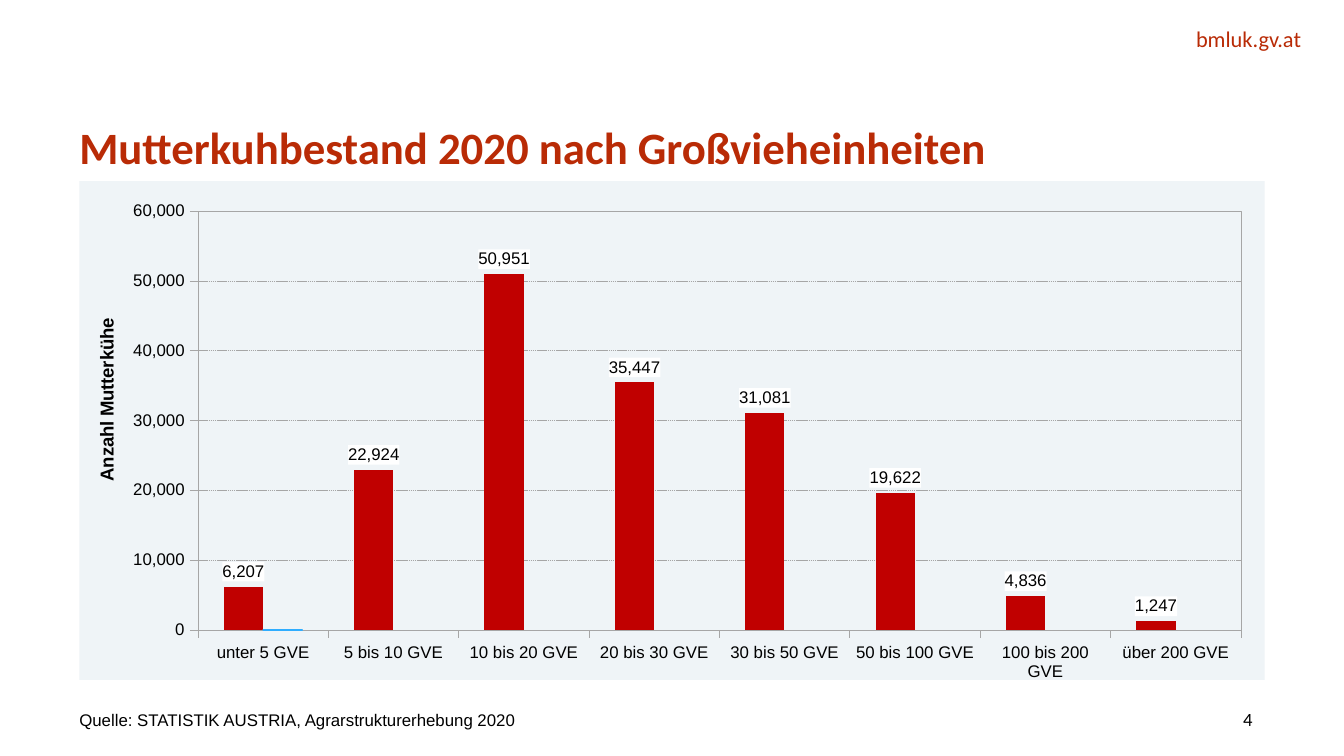
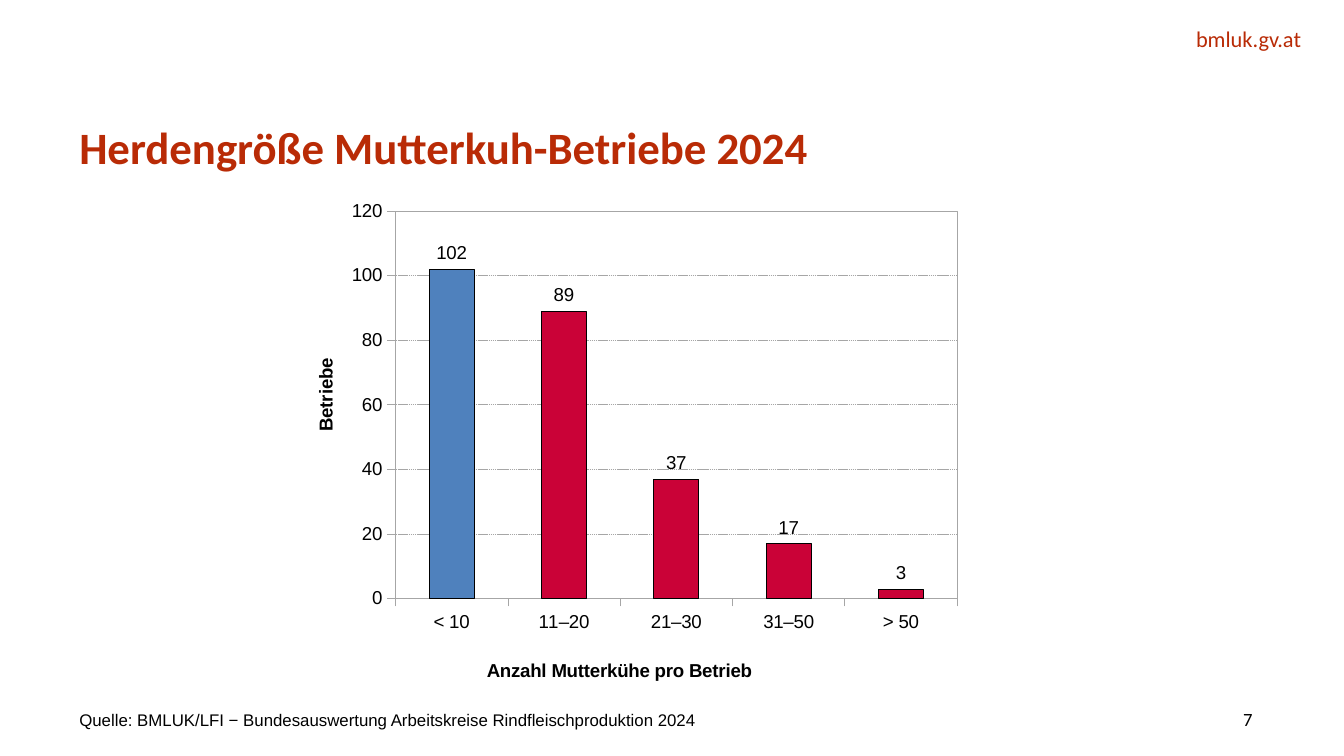
import pptx
import pptx.chart.data
import pptx.dml.color
import pptx.enum.chart
import pptx.enum.dml
import pptx.enum.text
import pptx.oxml
import pptx.oxml.ns
import pptx.util
from dataclasses import dataclass

Pt = pptx.util.Pt
qn = pptx.oxml.ns.qn
ALIGN = pptx.enum.text.PP_ALIGN
ANCHOR = pptx.enum.text.MSO_ANCHOR
CHART = pptx.enum.chart


@dataclass(frozen=True)
class Theme:
    brand: str = "B92B06"
    ink: str = "000000"
    rule: str = "A6A6A6"
    panel: str = "EFF4F7"
    paper: str = "FFFFFF"
    head_font: str = "Calibri"
    body_font: str = "Arial"
    title_size: float = 24
    site_size: float = 12
    page_size: float = 10
    source_size: float = 9
    chart_size: float = 10
    chart_small: float = 9
    hairline: float = 0.25


T = Theme()
MARGIN = 42.5  # left edge of title, source and first chart


def rgb(value):
    return pptx.dml.color.RGBColor.from_string(value)


def style_font(font, size, color=T.ink, name=T.body_font, bold=False):
    font.size, font.name, font.bold = Pt(size), name, bold
    font.color.rgb = rgb(color)


def style_line(line, color=T.rule, width=T.hairline, dashed=False):
    line.color.rgb = rgb(color)
    line.width = Pt(width)
    if dashed:
        line.dash_style = pptx.enum.dml.MSO_LINE.SQUARE_DOT


def add_text(slide, box, text, size, color=T.ink, font=T.body_font, bold=False,
             align=ALIGN.LEFT, anchor=ANCHOR.TOP, spacing=None):
    sp = slide.shapes.add_textbox(*map(Pt, box))
    tf = sp.text_frame
    tf.word_wrap = True
    tf.vertical_anchor = anchor
    tf.margin_left = tf.margin_right = tf.margin_top = tf.margin_bottom = 0
    p = tf.paragraphs[0]
    p.alignment = align
    if spacing:
        p.line_spacing = Pt(spacing)
    r = p.add_run()
    r.text = text
    style_font(r.font, size, color, font, bold)


def sp_pr(fill=None, line=None):
    """Shape properties for chart parts that python-pptx cannot format."""
    def solid(color):
        return f'<a:solidFill><a:srgbClr val="{color}"/></a:solidFill>' if color else "<a:noFill/>"
    width = Pt(T.hairline)
    return pptx.oxml.parse_xml(
        f'<c:spPr {pptx.oxml.ns.nsdecls("c", "a")}>{solid(fill)}'
        f'<a:ln w="{width}">{solid(line)}</a:ln></c:spPr>')


def set_layout(parent, index, x, y, size=None):
    """Place a plot area or title by fractions of the chart."""
    old = parent.find(qn("c:layout"))
    if old is not None:
        parent.remove(old)
    parts = [("xMode", "edge"), ("yMode", "edge"), ("x", x), ("y", y)]
    if size:
        parts = [("layoutTarget", "inner")] + parts + [("w", size[0]), ("h", size[1])]
    body = "".join(f'<c:{tag} val="{val}"/>' for tag, val in parts)
    parent.insert(index, pptx.oxml.parse_xml(
        f'<c:layout {pptx.oxml.ns.nsdecls("c")}><c:manualLayout>{body}'
        '</c:manualLayout></c:layout>'))


def set_axis_title(axis, text, x, y):
    title = axis.axis_title
    p = title.text_frame.paragraphs[0]
    r = p.add_run()
    r.text = text
    style_font(r.font, T.chart_size, bold=True)
    set_layout(title._element, 1, x, y)


def column_chart(slide, box, categories, series, plot, gap, top, step,
                 size=T.chart_size, number_format="General", dashed_axis=False, panel=None):
    data = pptx.chart.data.CategoryChartData(number_format=number_format)
    data.categories = categories
    for name, values in series:
        data.add_series(name, values)
    chart = slide.shapes.add_chart(
        CHART.XL_CHART_TYPE.COLUMN_CLUSTERED, *map(Pt, box), data).chart
    chart.has_legend = chart.has_title = False
    style_font(chart.font, T.chart_size)
    bars = chart.plots[0]
    bars.gap_width, bars.vary_by_categories = gap, False

    # Axes and gridlines
    cat, val = chart.category_axis, chart.value_axis
    for axis in (cat, val):
        axis.major_tick_mark = CHART.XL_TICK_MARK.OUTSIDE
        axis.minor_tick_mark = CHART.XL_TICK_MARK.NONE
        style_font(axis.tick_labels.font, size)
        style_line(axis.format.line, dashed=dashed_axis and axis is val)
    val.minimum_scale, val.maximum_scale, val.major_unit = 0, top, step
    val.tick_labels.number_format = number_format
    val.tick_labels.number_format_is_linked = False
    style_line(val.major_gridlines.format.line, dashed=True)

    # Plot frame and background
    space = chart._chartSpace
    area = space.find(qn("c:chart")).find(qn("c:plotArea"))
    set_layout(area, 0, plot[0], plot[1], plot[2:])
    area.append(sp_pr(line=T.rule))
    space.find(qn("c:chart")).addnext(sp_pr(fill=panel))
    return chart


def style_series(series, color, line=None, width=T.hairline):
    series.format.fill.solid()
    series.format.fill.fore_color.rgb = rgb(color)
    if line:
        style_line(series.format.line, line, width)


def label_series(series, size, number_format="General", fill=None):
    labels = series.data_labels
    labels.show_value = True
    labels.number_format = number_format
    labels.number_format_is_linked = False
    labels.position = CHART.XL_LABEL_POSITION.OUTSIDE_END
    style_font(labels.font, size)
    if fill:
        labels._element.find(qn("c:txPr")).addprevious(sp_pr(fill=fill))


def base_slide(prs, title, source, page):
    slide = prs.slides.add_slide(prs.slide_layouts[6])
    # Header
    add_text(slide, (523.5, 13.7, 173.5, 14.4), "bmluk.gv.at", T.site_size,
             T.brand, T.head_font, align=ALIGN.RIGHT)
    add_text(slide, (MARGIN, 63, 628.5, 49), title, T.title_size,
             T.brand, T.head_font, bold=True, spacing=30)
    # Footer
    add_text(slide, (MARGIN, 377.5, 541.5, 16), source, T.source_size, anchor=ANCHOR.MIDDLE)
    add_text(slide, (607, 377.5, 64, 16), page, T.page_size, font=T.head_font,
             align=ALIGN.RIGHT, anchor=ANCHOR.MIDDLE)
    return slide


def stock_chart(slide, box):
    thousands = "#,##0"
    chart = column_chart(
        slide, box,
        ["unter 5 GVE", "5 bis 10 GVE", "10 bis 20 GVE", "20 bis 30 GVE", "30 bis 50 GVE",
         "50 bis 100 GVE", "100 bis 200 GVE", "über 200 GVE"],
        [("Series 1", (6207, 22924, 50951, 35447, 31081, 19622, 4836, 1247)),
         ("Series 2", (0,))],
        plot=(0.1, 0.06, 0.88, 0.84), gap=132, top=60000, step=10000,
        size=T.chart_small, number_format=thousands, panel=T.panel)
    set_axis_title(chart.value_axis, "Anzahl Mutterkühe", 0.01, 0.27)
    cows, empty = chart.plots[0].series
    style_series(cows, "C00000")
    style_series(empty, "0063A3", "2FADFF", 0.75)
    label_series(cows, T.chart_small, thousands, T.paper)


def herd_chart(slide, box):
    chart = column_chart(
        slide, box, ["< 10", "11–20", "21–30", "31–50", "> 50"],
        [("Series 1", (102, 89, 37, 17, 3))],
        plot=(0.153, 0.066, 0.81, 0.762), gap=150, top=120, step=20, dashed_axis=True)
    set_axis_title(chart.category_axis, "Anzahl Mutterkühe pro Betrieb", 0.28, 0.94)
    set_axis_title(chart.value_axis, "Betriebe", 0.03, 0.35)
    farms = chart.plots[0].series[0]
    style_series(farms, "CA0237", T.ink)
    style_series(farms.points[0], "4F81BD", T.ink)
    label_series(farms, T.chart_size)


def main():
    prs = pptx.Presentation()
    prs.slide_width, prs.slide_height = Pt(720), Pt(405)

    slide = base_slide(prs, "Mutterkuhbestand 2020 nach Großvieheinheiten",
                       "Quelle: STATISTIK AUSTRIA, Agrarstrukturerhebung 2020", "4")
    stock_chart(slide, (MARGIN, 97, 635, 268.5))

    slide = base_slide(
        prs, "Herdengröße Mutterkuh-Betriebe 2024",
        "Quelle: BMLUK/LFI − Bundesauswertung Arbeitskreise Rindfleischproduktion 2024", "7")
    herd_chart(slide, (155, 95, 371.5, 273.5))

    prs.save("out.pptx")


if __name__ == "__main__":
    main()
